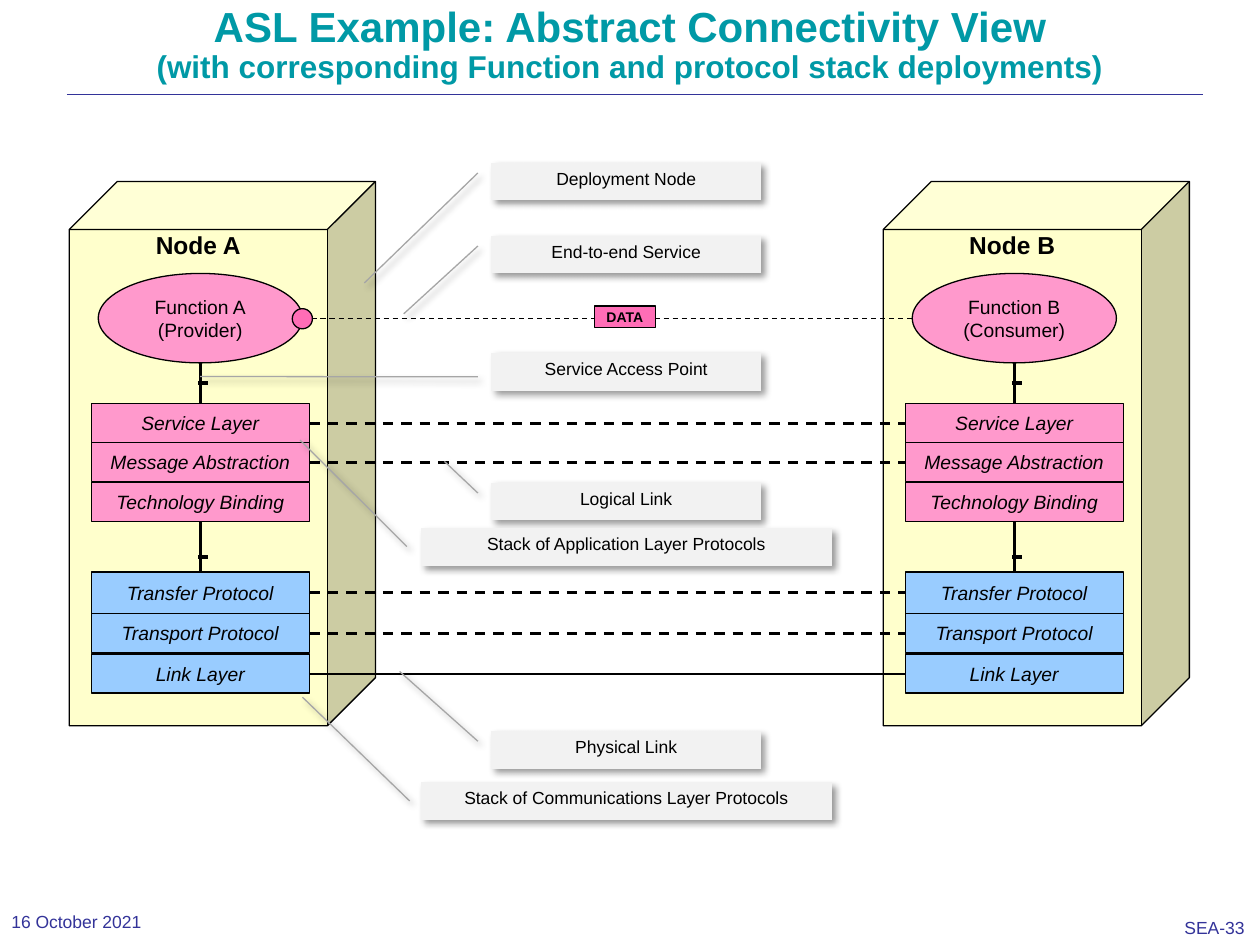
from lxml.etree import SubElement
from pptx import Presentation
from pptx.dml.color import RGBColor
from pptx.enum.dml import MSO_LINE
from pptx.enum.shapes import MSO_CONNECTOR, MSO_SHAPE
from pptx.enum.text import MSO_ANCHOR, PP_ALIGN
from pptx.oxml.ns import qn
from pptx.util import Inches, Pt

COLORS = {
    "title": "0099A6", "footer": "333399", "black": "000000",
    "node": "FFFFCC", "application": "FF99CC", "data": "FF6DB6",
    "communication": "99CCFF", "callout": "F2F2F2", "leader": "A6A6A6",
}
TITLE = [("ASL Example: Abstract Connectivity View", 24),
         ("(with corresponding Function and protocol stack deployments)", 18)]

# Name, function, centre of the stack, heights of the two port marks' stems
NODES = [("Node A", "Function A\v(Provider)", 1.59),
         ("Node B", "Function B\n(Consumer)", 8.05)]
# Name, top, height, colour
LAYERS = [
    ("Service Layer", 3.2, 0.31, "application"),
    ("Message Abstraction", 3.51, 0.31, "application"),
    ("Technology Binding", 3.83, 0.31, "application"),
    ("Transfer Protocol", 4.54, 0.33, "communication"),
    ("Transport Protocol", 4.87, 0.31, "communication"),
    ("Link Layer", 5.19, 0.31, "communication"),
]
STEMS = [(2.88, 3.2, 3.04), (4.14, 4.54, 4.42)]  # top, bottom, port mark
LINKS = [(3.36, True), (3.67, True), (4.7, True), (5.03, True), (5.35, False)]
# Text, top, width, leader line (y and x at its start, y and x at its end)
CALLOUTS = [
    ("Physical Link", 5.8, 2.14, (0.277, 1.05, -1.569, 1.34)),
    ("Logical Link", 3.83, 2.14, (0.277, 1.05, -0.56, 1.174)),
    ("End-to-end Service", 1.87, 2.14, (0.277, 1.05, 2.071, 1.325)),
    ("Stack of Communications Layer Protocols", 6.21, 3.26, (0.493, 1.027, -2.254, 1.288)),
    ("Stack of Application Layer Protocols", 4.19, 3.26, (0.493, 1.034, -2.326, 1.294)),
    ("Service Access Point", 2.8, 2.14, (0.637, 1.05, 0.629, 2.08)),
    ("Deployment Node", 1.29, 2.14, (0.277, 1.05, 3.188, 1.471)),
]
LAYER_WIDTH = 1.73
FUNCTION_WIDTH = 1.62
CALLOUT_CENTER = 4.97


def rgb(name):
    return RGBColor.from_string(COLORS[name])


def write(shape, text, size, color="black", bold=False, italic=False,
          align=PP_ALIGN.CENTER, anchor=MSO_ANCHOR.MIDDLE, insets=(0.02, 0.02), wrap=True):
    frame = shape.text_frame
    frame.word_wrap = wrap
    frame.vertical_anchor = anchor
    frame.margin_left = frame.margin_right = Inches(insets[0])
    frame.margin_top = frame.margin_bottom = Inches(insets[1])
    frame.text = text
    for para in frame.paragraphs:
        para.alignment = align
        font = para.font
        font.name, font.size = "Arial", Pt(size)
        font.bold, font.italic = bold, italic
        font.color.rgb = rgb(color)


def add_box(page, kind, left, top, width, height, fill, line="black"):
    shape = page.shapes.add_shape(
        kind, Inches(left), Inches(top), Inches(width), Inches(height))
    shape.shadow.inherit = False
    shape.fill.solid()
    shape.fill.fore_color.rgb = rgb(fill)
    shape.line.color.rgb = rgb(line)
    shape.line.width = Pt(0.75)
    return shape


def add_line(page, start, end, width, color="black", dashed=False):
    line = page.shapes.add_connector(
        MSO_CONNECTOR.STRAIGHT, *(Inches(value) for value in start + end))
    line.line.color.rgb = rgb(color)
    line.line.width = Pt(width)
    if dashed:
        line.line.dash_style = MSO_LINE.DASH
    SubElement(line._element.spPr, qn("a:effectLst"))


def add_text(page, text, left, top, width, height, **style):
    box = page.shapes.add_textbox(Inches(left), Inches(top), Inches(width), Inches(height))
    write(box, text, 10, "footer", align=PP_ALIGN.LEFT, wrap=False, **style)


def add_title(page):
    box = page.shapes.add_textbox(Inches(0.5), 0, Inches(9), Inches(1.25))
    write(box, "", TITLE[0][1], "title", bold=True, anchor=MSO_ANCHOR.TOP, insets=(0.1, 0.05))
    para = box.text_frame.paragraphs[0]
    para.line_spacing = 0.9
    for index, (text, size) in enumerate(TITLE):
        if index:
            para.add_line_break()
        span = para.add_run()
        span.text = text
        span.font.size = Pt(size)


def add_node(page, name, function, center):
    cube = add_box(page, MSO_SHAPE.CUBE, center - 1.04, 1.44, 2.43, 4.32, "node")
    cube.adjustments[0] = 0.157
    write(cube, name, 14, bold=True, anchor=MSO_ANCHOR.TOP, insets=(0.1, 0), wrap=False)
    oval = add_box(page, MSO_SHAPE.OVAL, center - FUNCTION_WIDTH / 2, 2.17,
                   FUNCTION_WIDTH, 0.71, "application")
    write(oval, function, 11, insets=(0, 0.05))
    for top, bottom, mark in STEMS:
        add_line(page, (center, top), (center, bottom), 1.5)
        add_line(page, (center - 0.02, mark), (center + 0.06, mark), 2.25)
    for layer, top, height, color in LAYERS:
        box = add_box(page, MSO_SHAPE.RECTANGLE, center - LAYER_WIDTH / 2, top,
                      LAYER_WIDTH, height, color)
        write(box, layer, 11, italic=True)


def add_shadow(shape):
    effects = shape._element.spPr.find(qn("a:effectLst"))
    shadow = SubElement(effects, qn("a:outerShdw"), blurRad=str(Pt(4)), dist=str(Pt(3)),
                        dir=str(45 * 60000), algn="tl", rotWithShape="0")
    color = SubElement(shadow, qn("a:srgbClr"), val=COLORS["black"])
    SubElement(color, qn("a:alpha"), val="40000")


def add_callout(page, text, top, width, leader):
    shape = add_box(page, MSO_SHAPE.LINE_CALLOUT_1_NO_BORDER, CALLOUT_CENTER - width / 2,
                    top, width, 0.3, "callout", "leader")
    shape._element.spPr.xfrm.set("flipH", "1")
    for index, value in enumerate(leader):
        shape.adjustments[index] = value
    add_shadow(shape)
    write(shape, text, 10, anchor=MSO_ANCHOR.TOP, insets=(0.04, 0.04))


def main():
    deck = Presentation()
    deck.slide_width, deck.slide_height = Inches(10), Inches(7.5)
    page = deck.slides.add_slide(deck.slide_layouts[6])

    add_line(page, (0.53, 0.75), (9.55, 0.75), 0.13, "footer")
    add_text(page, "SEA-33", 9.31, 7.24, 0.68, 0.26, anchor=MSO_ANCHOR.TOP, insets=(0.09, 0.04))
    add_title(page)
    add_text(page, "16 October 2021", 0, 7.17, 1.89, 0.29, insets=(0.09, 0.05))

    for node in NODES:
        add_node(page, *node)

    left, right = (center for _, _, center in NODES)
    reach = FUNCTION_WIDTH / 2
    add_line(page, (left + reach, 2.53), (right - reach, 2.53), 0.75, dashed=True)
    add_box(page, MSO_SHAPE.OVAL, left + reach - 0.08, 2.45, 0.16, 0.16, "data")
    data = add_box(page, MSO_SHAPE.RECTANGLE, 4.72, 2.43, 0.48, 0.17, "data")
    write(data, "DATA", 8, bold=True, anchor=MSO_ANCHOR.TOP)
    reach = LAYER_WIDTH / 2
    for height, dashed in LINKS:
        add_line(page, (left + reach, height), (right - reach, height), 1.5, dashed=dashed)

    for callout in CALLOUTS:
        add_callout(page, *callout)
    deck.save("out.pptx")


if __name__ == "__main__":
    main()
